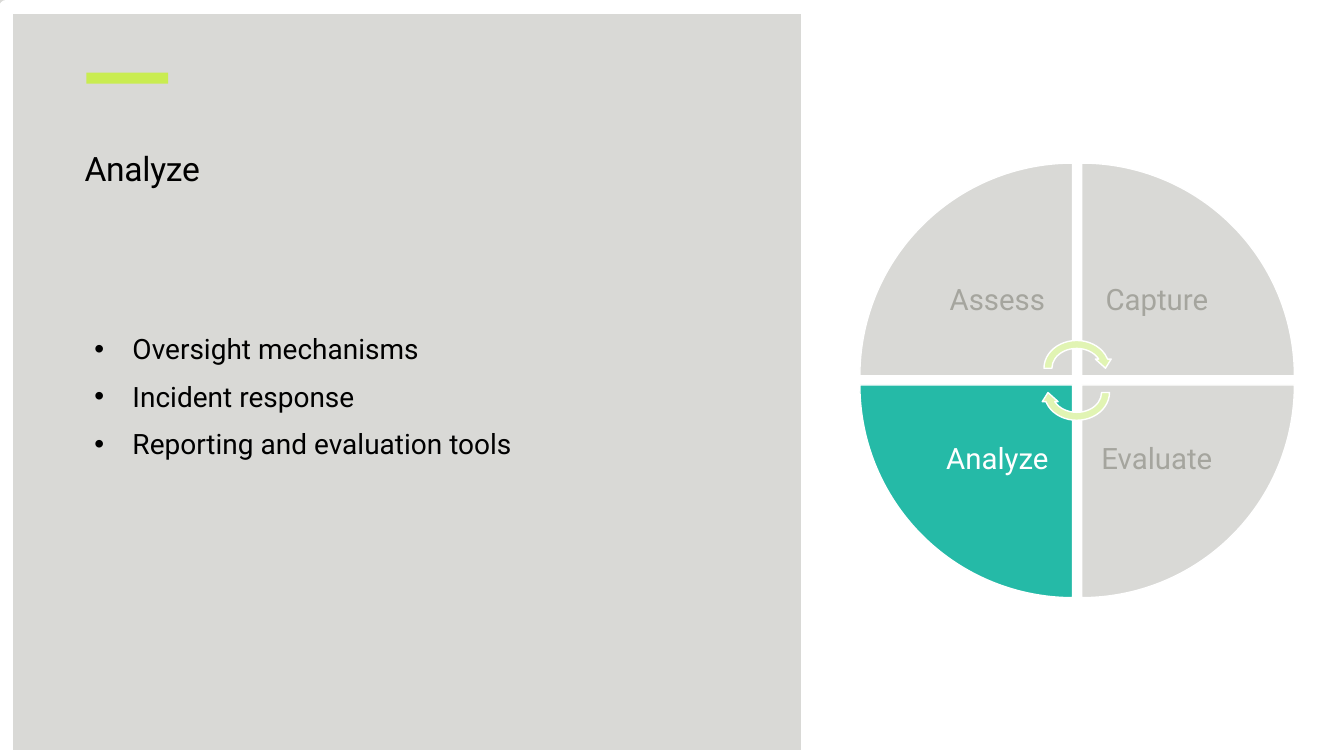
"""Build the Analyze slide with its four-part cycle."""
from dataclasses import dataclass

from lxml import etree
from pptx import Presentation
from pptx.dml.color import RGBColor
from pptx.enum.shapes import MSO_CONNECTOR, MSO_SHAPE
from pptx.enum.text import MSO_ANCHOR, MSO_AUTO_SIZE, PP_ALIGN
from pptx.oxml.ns import qn
from pptx.shapes.autoshape import Shape
from pptx.slide import Slide
from pptx.text.text import TextFrame
from pptx.util import Cm, Pt

RECT, WEDGE, ARROW = MSO_SHAPE.RECTANGLE, MSO_SHAPE.PIE_WEDGE, MSO_SHAPE.CIRCULAR_ARROW
LINE = MSO_CONNECTOR.STRAIGHT
LEFT, CENTER = PP_ALIGN.LEFT, PP_ALIGN.CENTER
TOP, MIDDLE = MSO_ANCHOR.TOP, MSO_ANCHOR.MIDDLE
FIXED = MSO_AUTO_SIZE.NONE

Box = tuple[float, float, float, float]


@dataclass(frozen=True)
class Theme:
    """Colours, font and type sizes."""
    font: str = "Roboto"
    title: float = 24
    body: float = 20
    label: float = 21
    thin: float = 1
    thick: float = 9.5
    black: str = "000000"
    white: str = "FFFFFF"
    panel: str = "D9D9D6"
    muted: str = "A5A59E"
    lime: str = "C9EC51"
    pale: str = "E1F4B3"
    teal: str = "25BAA7"


THEME = Theme()


@dataclass(frozen=True)
class Part:
    """One quarter of the cycle."""
    label: str
    col: int
    row: int
    turn: int
    fill: str = THEME.panel
    ink: str = THEME.muted


@dataclass(frozen=True)
class Arc:
    """One arrow at the hub of the cycle."""
    top: float
    turn: int


PARTS = [
    Part("Assess", 0, 0, 0),
    Part("Capture", 1, 0, 90),
    Part("Evaluate", 1, 1, 180),
    Part("Analyze", 0, 1, 270, THEME.teal, THEME.white),
]
ARCS = [Arc(8.48, 0), Arc(9.09, 180)]
POINTS = ["Oversight mechanisms", "Incident response", "Reporting and evaluation tools"]

WHEEL_X, WHEEL_Y = 21.67, 4.11
SIDE, PITCH, INNER = 5.36, 5.59, 3.79


def place(item: Shape, box: Box) -> None:
    """Set position and size in centimetres."""
    item.left, item.top, item.width, item.height = map(Cm, box)


def draw(slide: Slide, kind: MSO_SHAPE, box: Box, fill: str | None = None,
         line: float = 0, turn: int = 0) -> None:
    """Add a preset shape with an optional fill and white outline."""
    shape = slide.shapes.add_shape(kind, *map(Cm, box))
    shape.shadow.inherit = False
    shape.rotation = turn
    if fill:
        shape.fill.solid()
        shape.fill.fore_color.rgb = RGBColor.from_string(fill)
    else:
        shape.fill.background()
    if line:
        shape.line.color.rgb = RGBColor.from_string(THEME.white)
        shape.line.width = Pt(line)
    else:
        shape.line.fill.background()


def write(frame: TextFrame, lines: list[str], *, size: float, color: str = THEME.black,
          align: PP_ALIGN = LEFT, anchor: MSO_ANCHOR = TOP,
          inset: tuple[float, float] = (0, 0), leading: float = 1, gap: float = 0,
          bullet: bool = False, track: int = 0) -> None:
    """Fill a text frame with formatted paragraphs."""
    frame.word_wrap = True
    frame.auto_size = FIXED
    frame.vertical_anchor = anchor
    frame.margin_left = frame.margin_right = Cm(inset[0])
    frame.margin_top = frame.margin_bottom = Cm(inset[1])
    for i, text in enumerate(lines):
        para = frame.paragraphs[0] if i == 0 else frame.add_paragraph()
        para.alignment = align
        para.line_spacing = leading
        para.space_before = Pt(gap if i else 0)
        if bullet:
            props = para._p.get_or_add_pPr()
            props.set("marL", str(Cm(0.96)))
            props.set("indent", str(-Cm(0.96)))
            etree.SubElement(props, qn("a:buFont")).set("typeface", "Arial")
            etree.SubElement(props, qn("a:buChar")).set("char", "•")
        run = para.add_run()
        run.text = text
        run.font.name = THEME.font
        run.font.size = Pt(size)
        run.font.color.rgb = RGBColor.from_string(color)
        if track:
            run._r.get_or_add_rPr().set("spc", str(track))


def base(slide: Slide) -> None:
    """Draw the panel, accent bar, divider and frame."""
    draw(slide, RECT, (0, 0, 20.35, 19.05), THEME.panel)
    draw(slide, RECT, (2.18, 1.83, 2.06, 0.28), THEME.lime)
    edge = slide.shapes.add_connector(LINE, Cm(20.35), Cm(0.23), Cm(20.35), Cm(18.9))
    edge.line.color.rgb = RGBColor.from_string(THEME.white)
    edge.line.width = Pt(THEME.thick)
    etree.SubElement(edge.element.spPr, qn("a:effectLst"))
    draw(slide, RECT, (0.15, 0.18, 33.48, 18.9), line=THEME.thick)


def copy(slide: Slide) -> None:
    """Write the title and the bullet list."""
    title = slide.shapes.title
    title.element.getparent().append(title.element)
    place(title, (2.13, 3.73, 15.54, 4.17))
    write(title.text_frame, ["Analyze"], size=THEME.title, track=-20)
    body = slide.shapes.add_textbox(*map(Cm, (2.13, 8.23, 13.51, 9.14)))
    write(body.text_frame, POINTS, size=THEME.body, inset=(0.25, 0.13), gap=10, bullet=True)


def wheel(slide: Slide) -> None:
    """Draw the quarters, their labels and the hub arrows."""
    for part in PARTS:
        x, y = WHEEL_X + part.col * PITCH, WHEEL_Y + part.row * PITCH
        draw(slide, WEDGE, (x, y, SIDE, SIDE), part.fill, THEME.thin, part.turn)
        left = x + (1 - part.col) * (SIDE - INNER)
        top = y + (1 - part.row) * (SIDE - INNER)
        label = slide.shapes.add_textbox(Cm(left), Cm(top), Cm(INNER), Cm(INNER))
        write(label.text_frame, [part.label], size=THEME.label, color=part.ink,
              align=CENTER, anchor=MIDDLE, inset=(0.41, 0.41), leading=0.9)
    for arc in ARCS:
        draw(slide, ARROW, (26.21, arc.top, 1.85, 1.6), THEME.pale, THEME.thin, arc.turn)


def main() -> None:
    """Build and save the deck."""
    deck = Presentation()
    deck.slide_width, deck.slide_height = Cm(33.87), Cm(19.05)
    slide = deck.slides.add_slide(deck.slide_layouts[5])
    base(slide)
    copy(slide)
    wheel(slide)
    deck.save("out.pptx")


if __name__ == "__main__":
    main()
